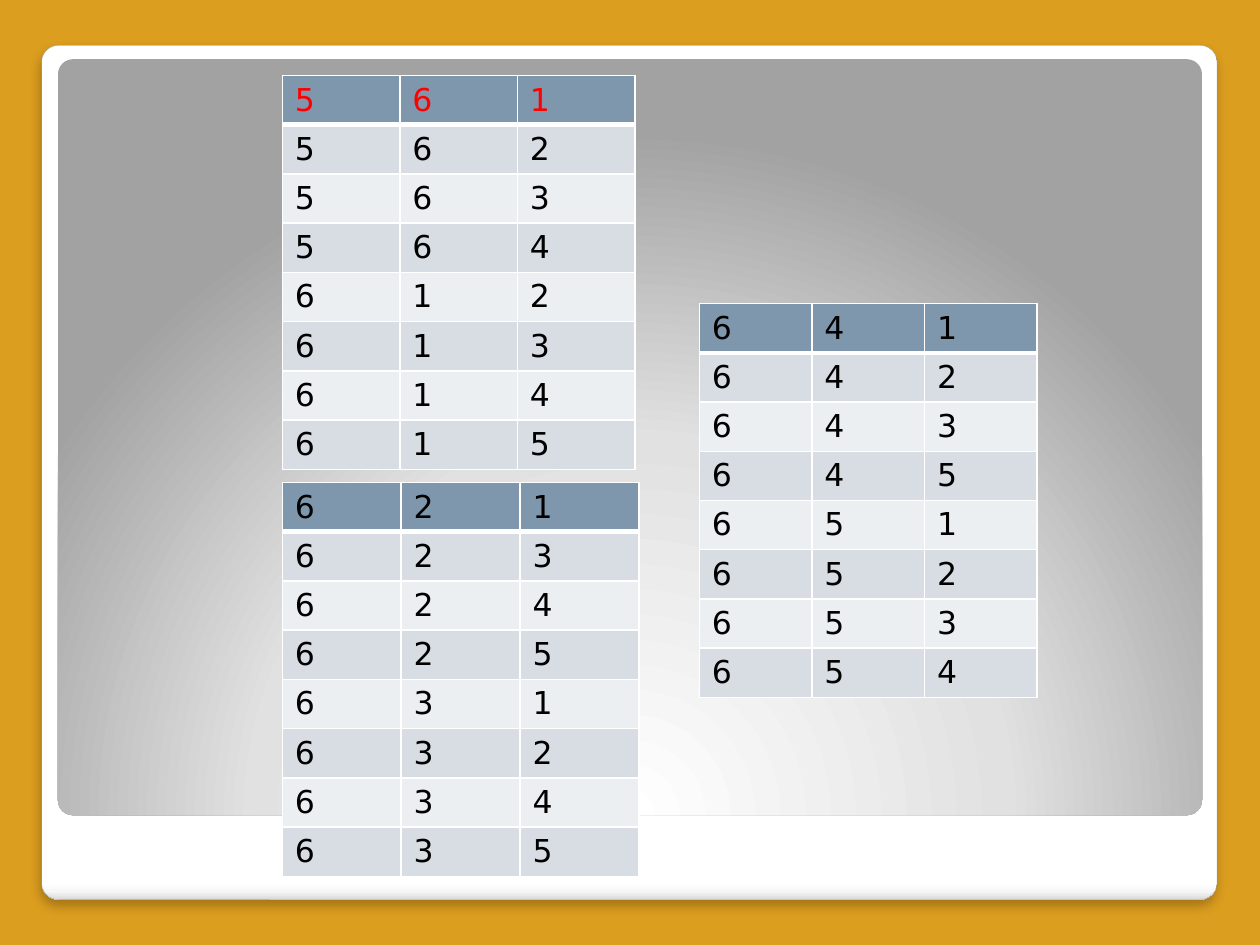
import itertools

import lxml.etree
import pptx
import pptx.dml.color
import pptx.enum.shapes
import pptx.oxml
import pptx.oxml.ns
import pptx.util

Inches, Pt = pptx.util.Inches, pptx.util.Pt
RGB = pptx.dml.color.RGBColor.from_string
NS = 'xmlns:a="http://schemas.openxmlformats.org/drawingml/2006/main"'
FONT = "DejaVu Sans"
COLORS = {
    "back": "DC9E1F", "white": "FFFFFF", "edge": "A4A4A4",
    "head": "7E97AD", "dark": "D8DDE3", "light": "ECEFF1",
    "red": "FF0000", "black": "000000",
}


def panel(box, stops, shade):
    """Add a rounded panel with a gradient; shade is the XML of its direction."""
    shape = slide.shapes.add_shape(
        pptx.enum.shapes.MSO_SHAPE.ROUNDED_RECTANGLE, *map(Inches, box))
    shape.adjustments[0] = 0.02
    shape.shadow.inherit = False
    shape.line.fill.background()
    shape.fill.background()
    marks = "".join(f'<a:gs pos="{pos * 1000}"><a:srgbClr val="{color}"/></a:gs>'
                    for pos, color in stops)
    props = shape._element.spPr
    props.replace(props.find(pptx.oxml.ns.qn("a:noFill")), pptx.oxml.parse_xml(
        f'<a:gradFill {NS} rotWithShape="1"><a:gsLst>{marks}</a:gsLst>{shade}</a:gradFill>'))
    return shape


def border(cell, side, width):
    cell._tc.get_or_add_tcPr().append(pptx.oxml.parse_xml(
        f'<a:ln{side} {NS} w="{Pt(width)}"><a:solidFill>'
        f'<a:srgbClr val="{COLORS["white"]}"/></a:solidFill></a:ln{side}>'))


deck = pptx.Presentation()
deck.slide_width, deck.slide_height = Inches(10), Inches(7.5)
slide = deck.slides.add_slide(deck.slide_layouts[6])
slide.background.fill.solid()
slide.background.fill.fore_color.rgb = RGB(COLORS["back"])

# Panels behind the tables
frame = panel((0.33, 0.36, 9.33, 6.78),
              [(0, "FFFFFF"), (98, "FFFFFF"), (99, "F7F7F7"), (100, "DADADA")],
              '<a:lin ang="5400000" scaled="0"/>')
frame.line.color.rgb = RGB(COLORS["edge"])
frame.line.width = Pt(0.16)
frame._element.spPr.find(pptx.oxml.ns.qn("a:effectLst")).append(pptx.oxml.parse_xml(
    f'<a:outerShdw {NS} blurRad="{Pt(6)}" dist="{Pt(4)}" dir="5400000" rotWithShape="0">'
    f'<a:srgbClr val="{COLORS["black"]}"><a:alpha val="25000"/></a:srgbClr></a:outerShdw>'))
panel((0.46, 0.47, 9.08, 6),
      [(0, "FFFFFF"), (55, "E1E1E1"), (100, "A2A2A2")],
      '<a:path path="circle">'
      '<a:fillToRect l="50000" t="175000" r="50000" b="-75000"/></a:path>')

# The last 24 ordered triples of the digits 1 to 6, eight to a table
ROWS, COLS, ROW_H = 8, 3, 0.39
triples = list(itertools.permutations("123456", COLS))[-3 * ROWS:]
places = [(2.24, 0.6, 2.8, "red"), (2.24, 3.83, 2.83, "black"), (5.55, 2.41, 2.68, "black")]

for part, (left, top, width, title) in enumerate(places):
    table = slide.shapes.add_table(
        ROWS, COLS, Inches(left), Inches(top), Inches(width), Inches(ROWS * ROW_H)).table
    for row in range(ROWS):
        table.rows[row].height = Inches(ROW_H)
        fill = "head" if row == 0 else "dark" if row % 2 else "light"
        for col, digit in enumerate(triples[part * ROWS + row]):
            cell = table.cell(row, col)
            for side in "LRTB":
                thick = (row, side) in [(0, "B"), (1, "T")]
                border(cell, side, 3 if thick else 1)
            cell.fill.solid()
            cell.fill.fore_color.rgb = RGB(COLORS[fill])
            run = cell.text_frame.paragraphs[0].add_run()
            run.text = digit
            run.font.name, run.font.size, run.font.bold = FONT, Pt(18), False
            run.font.color.rgb = RGB(COLORS[title if row == 0 else "black"])

deck.save("out.pptx")
